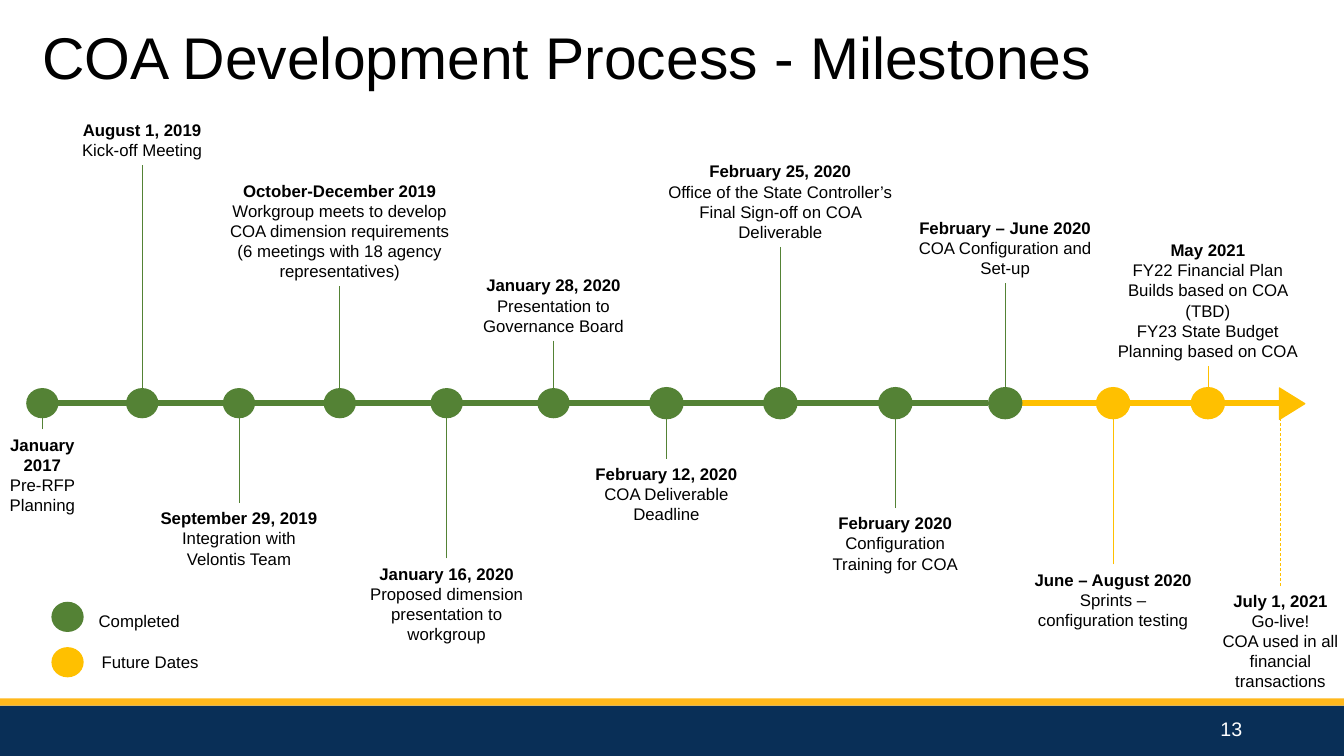
from dataclasses import dataclass

from lxml.etree import SubElement
from pptx import Presentation
from pptx.dml.color import RGBColor
from pptx.enum.dml import MSO_LINE
from pptx.enum.shapes import MSO_CONNECTOR, MSO_SHAPE
from pptx.enum.text import MSO_AUTO_SIZE, PP_ALIGN
from pptx.oxml.ns import qn
from pptx.util import Inches, Pt


@dataclass(frozen=True)
class Theme:
    completed: RGBColor = RGBColor.from_string("548235")
    future: RGBColor = RGBColor.from_string("FFC000")
    navy: RGBColor = RGBColor.from_string("092F57")
    gold: RGBColor = RGBColor.from_string("FFB81C")
    black: RGBColor = RGBColor.from_string("000000")
    white: RGBColor = RGBColor.from_string("FFFFFF")
    font: str = "Arial"
    title_size: int = 42
    body_size: int = 12
    number_size: int = 14


theme = Theme()
presentation = Presentation()
presentation.slide_width = Inches(13.33)
presentation.slide_height = Inches(7.5)
slide = presentation.slides.add_slide(presentation.slide_layouts[6])


def add_filled_shape(kind, left, top, width, height, color, outline=0):
    shape = slide.shapes.add_shape(
        kind, Inches(left), Inches(top), Inches(width), Inches(height))
    shape.shadow.inherit = False
    shape.fill.solid()
    shape.fill.fore_color.rgb = color
    if outline:
        shape.line.color.rgb = color
        shape.line.width = Pt(outline)
    else:
        shape.line.fill.background()
    return shape


def add_text(left, top, width, height, lines, size=theme.body_size,
             color=theme.black, alignment=PP_ALIGN.LEFT, bold_first=False):
    """Add a text box with one paragraph for each line."""
    text_box = slide.shapes.add_textbox(
        Inches(left), Inches(top), Inches(width), Inches(height))
    text_frame = text_box.text_frame
    text_frame.word_wrap = True
    text_frame.auto_size = MSO_AUTO_SIZE.SHAPE_TO_FIT_TEXT
    text_frame.text = "\n".join(lines)
    for index, paragraph in enumerate(text_frame.paragraphs):
        paragraph.alignment = alignment
        font = paragraph.runs[0].font
        font.name = theme.font
        font.size = Pt(size)
        font.color.rgb = color
        font.bold = bold_first and index == 0
    return text_box


# Footer and title
add_filled_shape(MSO_SHAPE.RECTANGLE, 0, 7, 13.33, 0.5, theme.navy)
add_filled_shape(MSO_SHAPE.RECTANGLE, 0, 6.93, 13.33, 0.07, theme.gold)
add_text(9.42, 7.06, 3, 0.4, ["13"], theme.number_size, theme.white, PP_ALIGN.RIGHT)
add_text(0.32, 0.16, 12.69, 0.81, ["COA Development Process - Milestones"],
         theme.title_size)

# Timeline axis
axis_y = 4
marker_width, marker_height = 0.32, 0.3
connectors = []
for start, end, color in ((0.58, 9.8, theme.completed), (10.13, 12.69, theme.future)):
    axis = slide.shapes.add_connector(
        MSO_CONNECTOR.STRAIGHT, Inches(start), Inches(axis_y), Inches(end), Inches(axis_y))
    axis.line.color.rgb = color
    axis.line.width = Pt(4.5)
    connectors.append(axis)

# Milestones: centre, label top, label width, wrapped line count, colour, outline, text
milestones = [
    (0.42, 4.26, 1.22, 4, theme.completed, 0, ["January 2017", "Pre-RFP Planning"]),
    (1.41, 1.14, 1.43, 2, theme.completed, 0, ["August 1, 2019", "Kick-off Meeting"]),
    (2.37, 4.99, 1.79, 3, theme.completed, 0,
     ["September 29, 2019", "Integration with Velontis Team"]),
    (3.37, 1.74, 2.43, 5, theme.completed, 0,
     ["October-December 2019", "Workgroup meets to develop COA dimension requirements "
      "(6 meetings with 18 agency representatives)"]),
    (4.43, 5.54, 2.12, 3, theme.completed, 0,
     ["January 16, 2020", "Proposed dimension presentation to workgroup"]),
    (5.49, 2.68, 1.67, 3, theme.completed, 0,
     ["January 28, 2020", "Presentation to Governance Board"]),
    (6.61, 4.55, 1.78, 3, theme.completed, 1.5,
     ["February 12, 2020", "COA Deliverable Deadline"]),
    (7.74, 1.55, 2.59, 4, theme.completed, 1.5,
     ["February 25, 2020",
      "Office of the State Controller’s Final Sign-off on COA Deliverable"]),
    (8.88, 5.04, 1.56, 3, theme.completed, 1.5,
     ["February 2020", "Configuration Training for COA"]),
    (9.97, 2.11, 1.93, 3, theme.completed, 1.5,
     ["February – June 2020", "COA Configuration and Set-up"]),
    (11.04, 5.6, 1.81, 3, theme.future, 1.5,
     ["June – August 2020", "Sprints – configuration testing"]),
    (11.98, 2.33, 2.05, 6, theme.future, 1.5,
     ["May 2021", "FY22 Financial Plan Builds based on COA (TBD)",
      "FY23 State Budget Planning based on COA"]),
    (12.7, 5.81, 1.58, 5, theme.future, 0,
     ["July 1, 2021", "Go-live!", "COA used in all financial transactions"]),
]
for center, top, width, line_count, color, outline, lines in milestones:
    is_go_live = lines[0] == "July 1, 2021"
    label_above = top < axis_y
    label = add_text(center - width / 2, top, width, 0.1 + 0.2 * line_count, lines,
                     alignment=PP_ALIGN.CENTER, bold_first=True)
    marker_edge = axis_y + marker_height / 2 * (-1 if label_above else 1)
    stem = slide.shapes.add_connector(
        MSO_CONNECTOR.STRAIGHT, Inches(center), Inches(top),
        Inches(center), Inches(marker_edge))
    stem.begin_connect(label, 2 if label_above else 0)
    stem.line.color.rgb = color
    stem.line.width = Pt(0.5)
    connectors.append(stem)
    if is_go_live:
        stem.line.dash_style = MSO_LINE.DASH
        arrow = add_filled_shape(
            MSO_SHAPE.ISOSCELES_TRIANGLE, 12.66, 3.88, 0.31, 0.25, color, outline=1)
        arrow.rotation = 90
    else:
        add_filled_shape(MSO_SHAPE.OVAL, center - marker_width / 2,
                         axis_y - marker_height / 2, marker_width, marker_height,
                         color, outline)

for connector in connectors:
    SubElement(connector.element.spPr, qn("a:effectLst"))

# Legend
for marker_top, text_left, text_top, text_width, label_text, color in (
        (5.97, 0.88, 6.01, 1.01, "Completed", theme.completed),
        (6.42, 0.91, 6.42, 1.2, "Future Dates", theme.future)):
    add_filled_shape(MSO_SHAPE.OVAL, 0.51, marker_top, marker_width, marker_height, color)
    add_text(text_left, text_top, text_width, 0.3, [label_text])

presentation.save("out.pptx")
